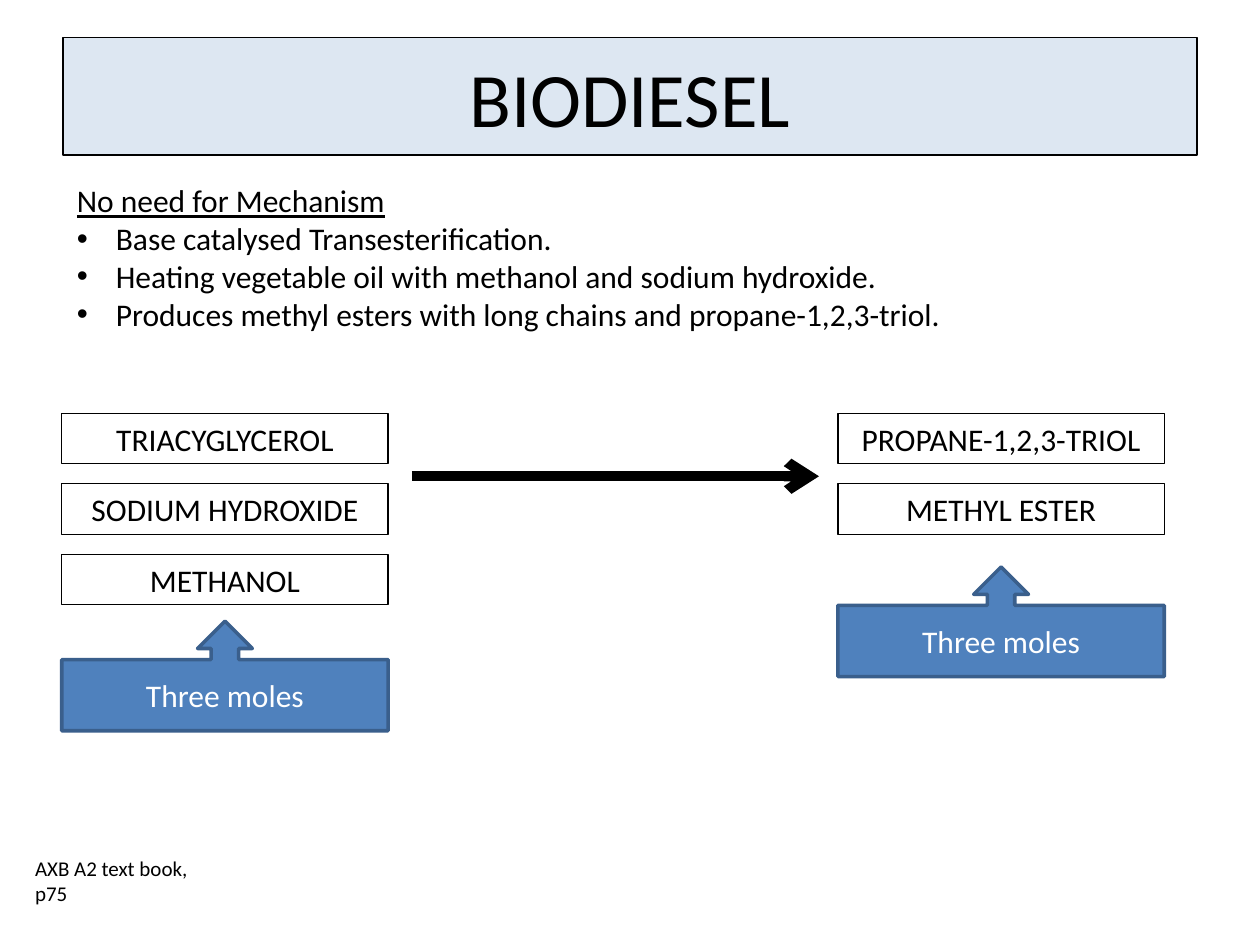
from dataclasses import dataclass

from lxml.etree import SubElement
from pptx import Presentation
from pptx.dml.color import RGBColor
from pptx.enum.shapes import MSO_CONNECTOR, MSO_SHAPE
from pptx.enum.text import MSO_ANCHOR, PP_ALIGN
from pptx.oxml.ns import qn
from pptx.util import Inches, Pt


@dataclass(frozen=True)
class Theme:
    font: str = "Calibri"
    black: RGBColor = RGBColor(0, 0, 0)
    white: RGBColor = RGBColor(255, 255, 255)
    blue: RGBColor = RGBColor(0x4F, 0x81, 0xBD)
    dark_blue: RGBColor = RGBColor(0x3A, 0x5F, 0x8C)
    title_size: int = 44
    body_size: int = 18
    note_size: int = 12


THEME = Theme()

TITLE = "BIODIESEL"
HEADING = "No need for Mechanism"
POINTS = [
    "Base catalysed Transesterification.",
    "Heating vegetable oil with methanol and sodium hydroxide.",
    "Produces methyl esters with long chains and propane-1,2,3-triol.",
]
# Each side of the reaction: left edge, substances, callout text, callout top
SIDES = [
    (0.49, ["TRIACYGLYCEROL", "SODIUM HYDROXIDE", "METHANOL"], "Three moles", 4.93),
    (6.65, ["PROPANE-1,2,3-TRIOL", "METHYL ESTER"], "Three moles", 4.5),
]
SOURCE_NOTE = "AXB A2 text book, p75"

FIRST_ROW, ROW_STEP = 3.28, 0.56
BOX_WIDTH, BOX_HEIGHT = 2.59, 0.4
CALLOUT_HEIGHT = 0.87
INDENT = 0.31


def place(shape, left, top, width, height):
    shape.left, shape.top = Inches(left), Inches(top)
    shape.width, shape.height = Inches(width), Inches(height)


def write(para, text, size, color=THEME.black, align=PP_ALIGN.LEFT):
    para.alignment = align
    span = para.add_run()
    span.text = text
    span.font.name = THEME.font
    span.font.size = Pt(size)
    span.font.color.rgb = color
    return span


def set_bullet(para, bullet):
    """Give the paragraph a hanging bullet, or none when bullet is empty."""
    properties = para._p.get_or_add_pPr()
    indent = Inches(INDENT) if bullet else 0
    properties.set("marL", str(indent))
    properties.set("indent", str(-indent))
    if bullet:
        SubElement(properties, qn("a:buFont"), typeface="Arial")
        SubElement(properties, qn("a:buChar"), char=bullet)
    else:
        SubElement(properties, qn("a:buNone"))


def add_label(slide, kind, area, text, fill, line, line_width, color):
    shape = slide.shapes.add_shape(kind, *map(Inches, area))
    shape.shadow.inherit = False
    if fill is None:
        shape.fill.background()
    else:
        shape.fill.solid()
        shape.fill.fore_color.rgb = fill
    shape.line.color.rgb = line
    shape.line.width = Pt(line_width)
    frame = shape.text_frame
    frame.word_wrap = True
    frame.vertical_anchor = MSO_ANCHOR.MIDDLE
    write(frame.paragraphs[0], text, THEME.body_size, color, PP_ALIGN.CENTER)


def add_title(slide):
    title = slide.shapes.title
    place(title, 0.5, 0.3, 9, 0.93)
    title.fill.solid()
    title.fill.fore_color.rgb = THEME.blue
    tint = title._element.spPr.find(qn("a:solidFill"))[0]
    SubElement(tint, qn("a:alpha"), val="19000")
    title.line.color.rgb = THEME.black
    title.line.width = Pt(0.75)
    title.text_frame.vertical_anchor = MSO_ANCHOR.MIDDLE
    write(title.text_frame.paragraphs[0], TITLE, THEME.title_size, align=PP_ALIGN.CENTER)


def add_points(slide):
    body = slide.placeholders[1]
    place(body, 0.51, 1.39, 8.98, 1.31)
    frame = body.text_frame
    for index, text in enumerate([HEADING, *POINTS]):
        para = frame.add_paragraph() if index else frame.paragraphs[0]
        para.space_before = Pt(0)
        set_bullet(para, "•" if index else "")
        span = write(para, text, THEME.body_size)
        span.font.underline = index == 0


def add_reaction(slide):
    for left, substances, moles, callout_top in SIDES:
        for row, substance in enumerate(substances):
            area = (left, FIRST_ROW + row * ROW_STEP, BOX_WIDTH, BOX_HEIGHT)
            add_label(slide, MSO_SHAPE.RECTANGLE, area, substance,
                      None, THEME.black, 0.75, THEME.black)
        add_label(slide, MSO_SHAPE.UP_ARROW_CALLOUT,
                  (left, callout_top, BOX_WIDTH, CALLOUT_HEIGHT), moles,
                  THEME.blue, THEME.dark_blue, 2, THEME.white)

    arrow = slide.shapes.add_connector(
        MSO_CONNECTOR.STRAIGHT, *map(Inches, (3.27, 3.78, 6.5, 3.78)))
    arrow.line.color.rgb = THEME.black
    arrow.line.width = Pt(5.75)
    SubElement(arrow.line._get_or_add_ln(), qn("a:tailEnd"), type="arrow")
    SubElement(arrow._element.spPr, qn("a:effectLst"))


def add_source_note(slide):
    box = slide.shapes.add_textbox(*map(Inches, (0.18, 6.74, 1.59, 0.5)))
    box.text_frame.word_wrap = True
    write(box.text_frame.paragraphs[0], SOURCE_NOTE, THEME.note_size)


def main():
    deck = Presentation()
    deck.slide_width, deck.slide_height = Inches(10), Inches(7.5)
    slide = deck.slides.add_slide(deck.slide_layouts[1])
    add_title(slide)
    add_points(slide)
    add_reaction(slide)
    add_source_note(slide)
    deck.save("out.pptx")


if __name__ == "__main__":
    main()
